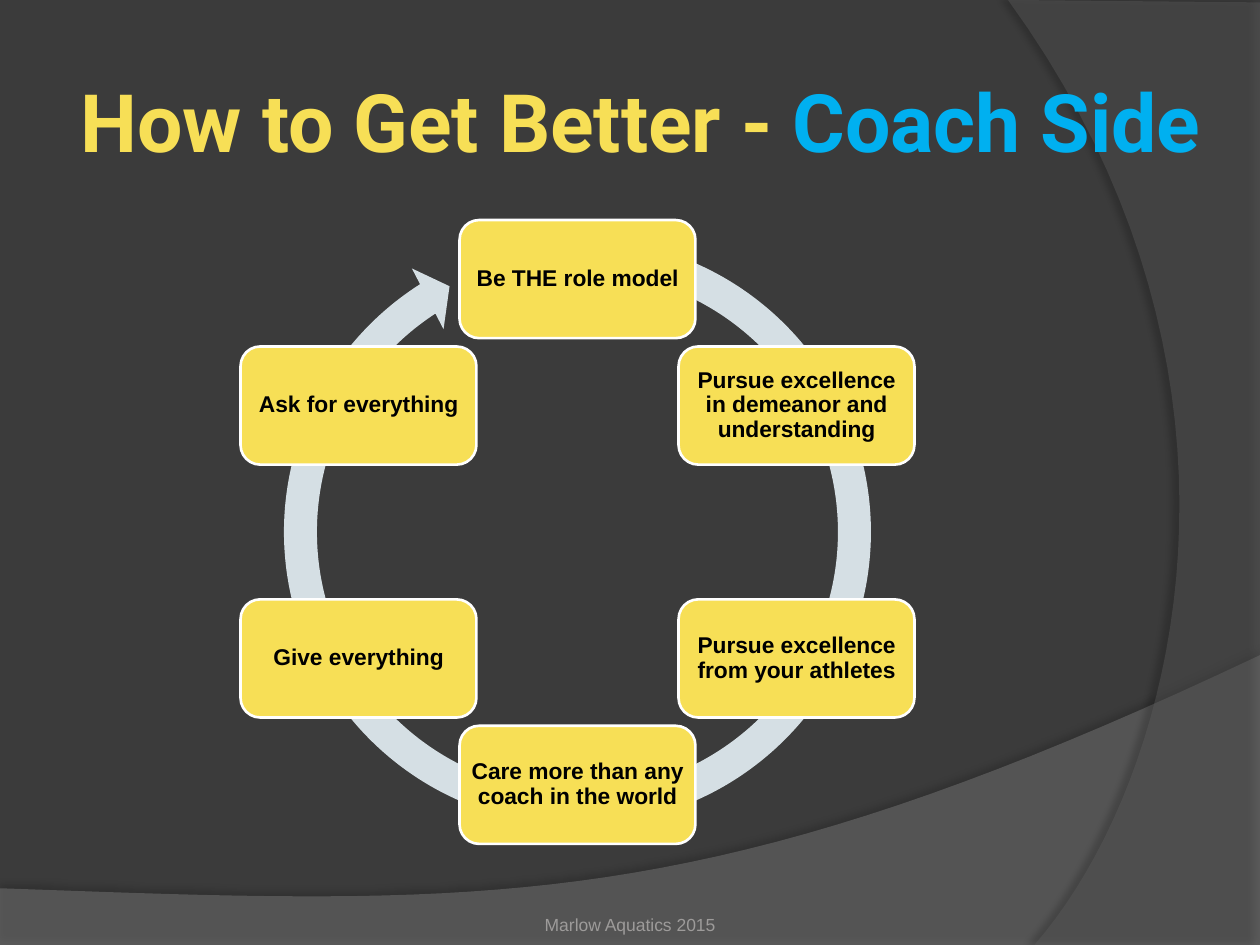
"""Build the "How to Get Better" slide with a six-step coaching cycle."""
from math import cos, radians, sin

from lxml import etree
from pptx import Presentation
from pptx.dml.color import RGBColor
from pptx.enum import shapes, text
from pptx.oxml import ns
from pptx.util import Pt

DARK = RGBColor(0x3B, 0x3B, 0x3B)
LOW_GREY = RGBColor(0x7F, 0x7F, 0x7F)
SIDE_GREY = RGBColor(0x5E, 0x5E, 0x5E)
YELLOW = RGBColor(0xF7, 0xDF, 0x56)
BLUE = RGBColor(0x00, 0xB0, 0xF0)
PALE = RGBColor(0xD5, 0xDF, 0xE4)
WHITE = RGBColor(0xFF, 0xFF, 0xFF)
BLACK = RGBColor(0x00, 0x00, 0x00)
FOOTER_GREY = RGBColor(0x9D, 0x9B, 0x9A)

WIDTH, HEIGHT = 720, 540
TITLE = [("How to Get Better - ", YELLOW), ("Coach Side", BLUE)]
FOOTER = [("Marlow Aquatics 2015", FOOTER_GREY)]
STEPS = [
    "Be THE role model",
    "Pursue excellence in demeanor and understanding",
    "Pursue excellence from your athletes",
    "Care more than any coach in the world",
    "Give everything",
    "Ask for everything",
]
CENTER_X, CENTER_Y, RADIUS = 330, 304, 144.5
BOX_WIDTH, BOX_HEIGHT = 134.8, 67.5
RING_SIZE = 355.7
RING_ADJUSTMENTS = [0.053, 3.126, 142.371, 171.218, 0.055]

SWOOSHES = [
    dict(corners=[(0, 507.6), (0, HEIGHT), (WIDTH, HEIGHT)],
         curve=[(WIDTH, 374.4), (402.5, 524.9), (281.5, 517.7), (0, 507.6)],
         color=LOW_GREY, alpha=45, shadow=(35, 4, 3.5, 270)),
    dict(corners=[(WIDTH, 1.4), (WIDTH, HEIGHT)],
         curve=[(591.1, HEIGHT), (673.2, 445.7), (733, 216), (576, 0)],
         color=SIDE_GREY, alpha=40, shadow=(45, 4, 4, 180)),
]


def bezier(points, steps=40):
    """Return points along a cubic curve."""
    weights = [((1 - t) ** 3, 3 * t * (1 - t) ** 2, 3 * t * t * (1 - t), t ** 3)
               for t in (i / steps for i in range(steps + 1))]
    return [tuple(sum(w * p[axis] for w, p in zip(row, points)) for axis in (0, 1))
            for row in weights]


def set_alpha(color, percent):
    """Set the opacity of a colour element."""
    etree.SubElement(color, ns.qn("a:alpha")).set("val", str(percent * 1000))


def add_swoosh(page, corners, curve, color, alpha, shadow):
    """Draw one translucent background sweep with its shadow."""
    outline = [(Pt(x), Pt(y)) for x, y in corners + bezier(curve)]
    builder = page.shapes.build_freeform(*outline[0])
    builder.add_line_segments(outline[1:], close=True)
    sweep = builder.convert_to_shape()
    paint(sweep, color)
    set_alpha(sweep.fill._xPr.find(".//" + ns.qn("a:srgbClr")), alpha)
    opacity, blur, distance, direction = shadow
    effects = sweep._element.spPr.find(ns.qn("a:effectLst"))
    outer = etree.SubElement(effects, ns.qn("a:outerShdw"), blurRad=str(Pt(blur)),
                             dist=str(Pt(distance)), dir=str(direction * 60000))
    set_alpha(etree.SubElement(outer, ns.qn("a:srgbClr"), val="000000"), opacity)


def paint(shape, fill, line=None):
    """Give a shape a flat fill and an optional outline."""
    shape.shadow.inherit = False
    shape.fill.solid()
    shape.fill.fore_color.rgb = fill
    if line is None:
        shape.line.fill.background()
    else:
        shape.line.color.rgb = line
        shape.line.width = Pt(1.5)


def write(shape, spans, size, font, bold=False, margin=0, spacing=1.0,
          anchor=text.MSO_ANCHOR.MIDDLE):
    """Fill a shape with one centred paragraph of coloured spans."""
    frame = shape.text_frame
    frame.word_wrap = True
    frame.vertical_anchor = anchor
    frame.margin_left = frame.margin_right = Pt(margin)
    frame.margin_top = frame.margin_bottom = Pt(margin)
    para = frame.paragraphs[0]
    para.alignment = text.PP_ALIGN.CENTER
    para.line_spacing = spacing
    for words, color in spans:
        span = para.add_run()
        span.text = words
        span.font.size = Pt(size)
        span.font.name = font
        span.font.bold = bold
        span.font.color.rgb = color


def add_centered(page, kind, x, y, width, height):
    """Add a preset shape around a centre point."""
    return page.shapes.add_shape(kind, Pt(x - width / 2), Pt(y - height / 2),
                                 Pt(width), Pt(height))


def add_cycle(page):
    """Draw the ring arrow and the step boxes spaced evenly around it."""
    ring = add_centered(page, shapes.MSO_SHAPE.CIRCULAR_ARROW,
                        CENTER_X, CENTER_Y, RING_SIZE, RING_SIZE)
    for index, value in enumerate(RING_ADJUSTMENTS):
        ring.adjustments[index] = value
    paint(ring, PALE)
    for index, step in enumerate(STEPS):
        angle = radians(index * 360 / len(STEPS))
        box = add_centered(page, shapes.MSO_SHAPE.ROUNDED_RECTANGLE,
                           CENTER_X + RADIUS * sin(angle),
                           CENTER_Y - RADIUS * cos(angle), BOX_WIDTH, BOX_HEIGHT)
        paint(box, YELLOW, WHITE)
        write(box, [(step, BLACK)], 13, "Arial", bold=True, spacing=0.9)


def main():
    deck = Presentation()
    deck.slide_width, deck.slide_height = Pt(WIDTH), Pt(HEIGHT)
    page = deck.slides.add_slide(deck.slide_layouts[6])
    page.background.fill.solid()
    page.background.fill.fore_color.rgb = DARK
    for swoosh in SWOOSHES:
        add_swoosh(page, **swoosh)
    title = page.shapes.add_textbox(Pt(36), Pt(23.8), Pt(660), Pt(90))
    write(title, TITLE, 46, "Roboto", bold=True, margin=3.6)
    add_cycle(page)
    footer = page.shapes.add_textbox(Pt(246), Pt(505.5), Pt(228), Pt(28.8))
    write(footer, FOOTER, 10, "Arial", anchor=text.MSO_ANCHOR.BOTTOM)
    deck.save("out.pptx")


if __name__ == "__main__":
    main()
